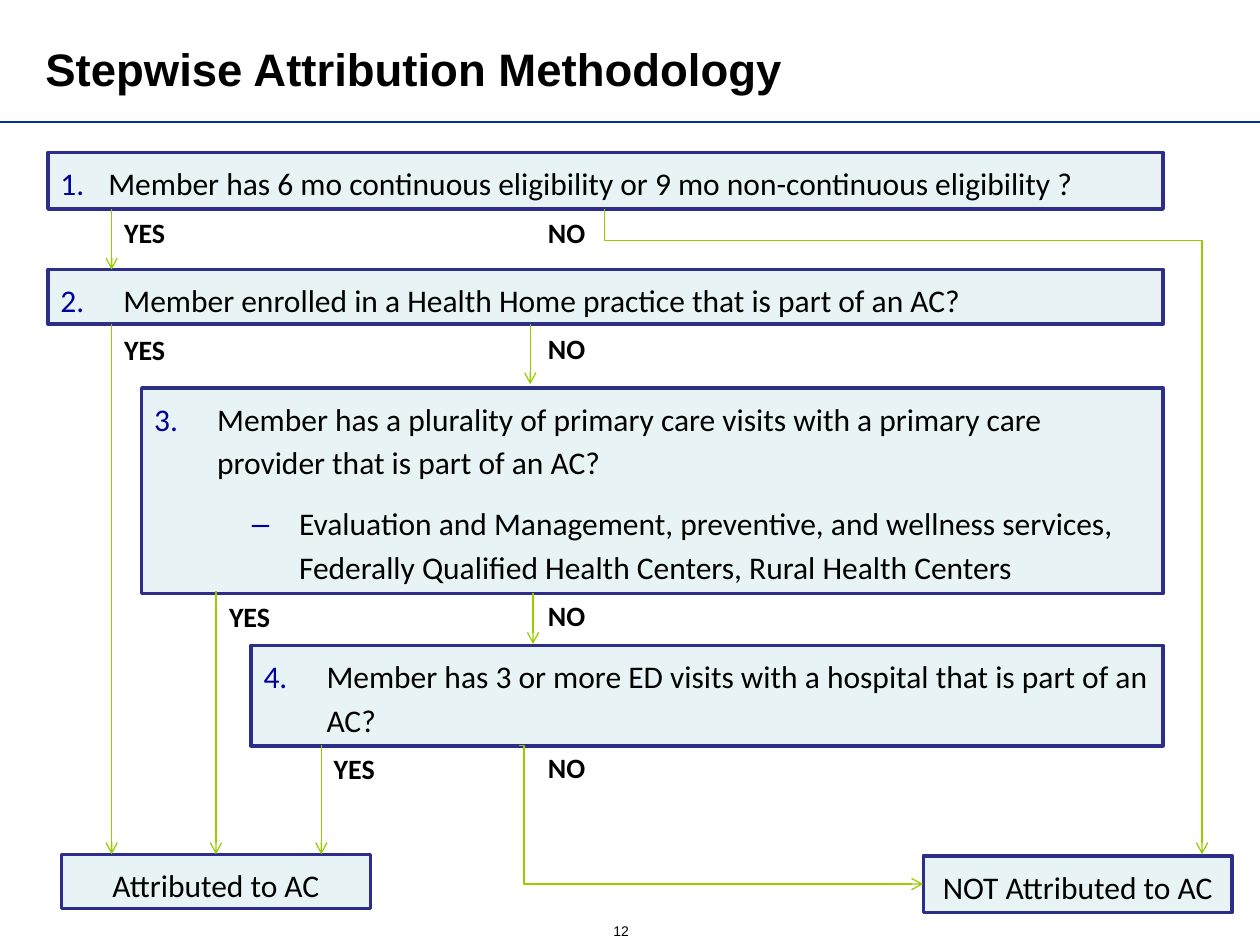
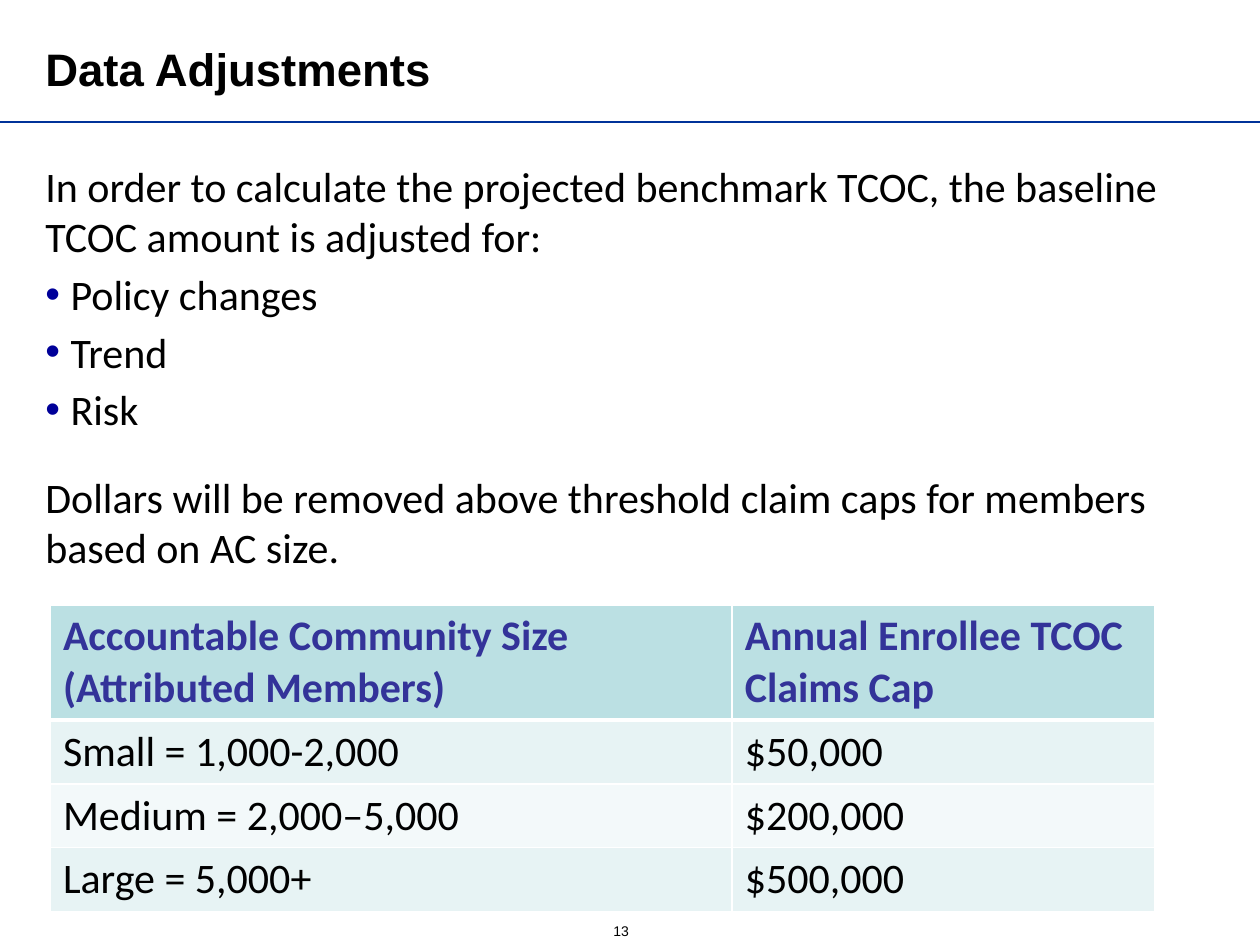
from lxml import etree
from pptx import Presentation
from pptx.dml.color import RGBColor
from pptx.enum.shapes import MSO_CONNECTOR, MSO_SHAPE
from pptx.enum.text import MSO_ANCHOR, MSO_AUTO_SIZE, PP_ALIGN
from pptx.oxml.ns import qn
from pptx.util import Pt

STRAIGHT, ELBOW = MSO_CONNECTOR.STRAIGHT, MSO_CONNECTOR.ELBOW
RECTANGLE = MSO_SHAPE.RECTANGLE
TOP, MIDDLE = MSO_ANCHOR.TOP, MSO_ANCHOR.MIDDLE
LEFT, CENTER = PP_ALIGN.LEFT, PP_ALIGN.CENTER
NO_FIT = MSO_AUTO_SIZE.NONE
TITLE_ONLY, TITLE_AND_BODY = 5, 1
TOP_SIDE, LEFT_SIDE = 0, 1

BLACK, WHITE = "000000", "FFFFFF"
RULE, BULLET, ARROW = "003399", "000099", "99CC00"
BOX_FILL, BOX_LINE = "E7F3F4", "2D2D8A"
HEAD_FILL, HEAD_TEXT, PALE = "BBE0E3", "333399", "F3F9FA"

TITLE_FONT = dict(name="Arial", size=Pt(26), bold=True)
NUMBER_FONT = dict(name="Arial", size=Pt(8))
STEP_FONT = dict(name="Calibri", size=Pt(18))
ANSWER_FONT = dict(name="Calibri", size=Pt(16), bold=True)
BODY_FONT = dict(name="Calibri", size=Pt(24), bold=False)
HEAD_FONT = dict(name="Calibri", size=Pt(24), bold=True)
STEP_SPACING = dict(line_spacing=1.15, space_after=Pt(10))

# Slide 12: places are left, top, width, height
STEPS = [
    ((27.4, 87.1, 637.2, 32.4), 27.4,
     "Member has 6 mo continuous eligibility or 9 mo non-continuous eligibility ?", None),
    ((27.4, 154.1, 637.2, 31), 36,
     "Member enrolled in a Health Home practice that is part of an AC?", None),
    ((81, 221.8, 583.6, 117.4), 36,
     "Member has a plurality of primary care visits with a primary care provider "
     "that is part of an AC?",
     "Evaluation and Management, preventive, and wellness services, "
     "Federally Qualified Health Centers, Rural Health Centers"),
    ((143.5, 368.8, 521.1, 57.4), 36,
     "Member has 3 or more ED visits with a hospital that is part of an AC?", None),
]
ATTRIBUTED = ("Attributed to AC", (35.2, 488.2, 176.4, 31))
NOT_ATTRIBUTED = ("NOT Attributed to AC", (527.6, 489, 176.4, 32.4))
# x, top and bottom of each straight arrow
ARROWS = [(63.8, 119.5, 154.1), (63.8, 185.1, 488.2), (303, 185.1, 219.6),
          (304.6, 338.6, 368), (183.6, 425.8, 488.2)]
STEP_3_YES = (123.4, 338, 488.2)
# left of YES, top of YES, top of NO
ANSWERS = [(63.8, 119.5, 119.5), (63.8, 186.5, 185.8),
           (123.8, 339.1, 338.4), (183.6, 426.2, 425.5)]
NO_LEFT = 306

# Slide 13: text, bulleted, space before
ADJUSTMENTS = [
    ("In order to calculate the projected benchmark TCOC, the baseline TCOC amount "
     "is adjusted for:", False, 0),
    ("Policy changes", True, 4.2),
    ("Trend", True, 4.2),
    ("Risk", True, 4.2),
    ("Dollars will be removed above threshold claim caps for members based on AC size.",
     False, 21),
]
CAPS = [
    ("Accountable Community Size (Attributed Members)", "Annual Enrollee TCOC Claims Cap"),
    ("Small = 1,000-2,000", "$50,000"),
    ("Medium = 2,000–5,000", "$200,000"),
    ("Large = 5,000+", "$500,000"),
]
CAP_COLUMNS = (389.6, 241.3)
CAP_ROWS = (65.8, 36.5, 36.5, 36.5)


def color(hex_text):
    return RGBColor.from_string(hex_text)


def points(place):
    return [Pt(value) for value in place]


def apply(target, values):
    for name, value in values.items():
        setattr(target, name, value)


def add_element(parent, tag, **attributes):
    element = etree.SubElement(parent, qn(tag))
    for name, value in attributes.items():
        element.set(name, str(value))
    return element


def write(para, text, font, hex_text=BLACK, **spacing):
    apply(para, spacing)
    span = para.add_run()
    span.text = text
    apply(span.font, font)
    span.font.color.rgb = color(hex_text)


def set_bullet(para, margin, hang, tag, **attributes):
    properties = para._p.get_or_add_pPr()
    properties.set("marL", str(Pt(margin)))
    properties.set("indent", str(Pt(-hang)))
    if tag != "a:buNone":
        add_element(add_element(properties, "a:buClr"), "a:srgbClr", val=BULLET)
        add_element(properties, "a:buFont", typeface="Arial")
    add_element(properties, tag, **attributes)


def place_frame(box, place, anchor, wrap=True):
    box.left, box.top, box.width, box.height = points(place)
    apply(box.text_frame, dict(word_wrap=wrap, auto_size=NO_FIT, vertical_anchor=anchor))
    return box.text_frame.paragraphs[0]


def add_text(page, place, text, font, wrap=True):
    box = page.shapes.add_textbox(*points(place))
    write(place_frame(box, place, TOP, wrap), text, font)


def add_box(page, place):
    box = page.shapes.add_shape(RECTANGLE, *points(place))
    box.shadow.inherit = False
    box.fill.solid()
    box.fill.fore_color.rgb = color(BOX_FILL)
    box.line.color.rgb = color(BOX_LINE)
    box.line.width = Pt(2)
    return box, place_frame(box, place, TOP)


def add_line(page, start, end, hex_text=ARROW, width=0.75, kind=STRAIGHT, arrow=True):
    line = page.shapes.add_connector(kind, *points(start + end))
    line.line.color.rgb = color(hex_text)
    line.line.width = Pt(width)
    properties = line._element.spPr
    if arrow:
        add_element(properties.find(qn("a:ln")), "a:tailEnd", type="arrow")
    add_element(properties, "a:effectLst")
    return line


def bend(line, share):
    """Put the turn of an elbow after this share of its way."""
    geometry = line._element.spPr.find(qn("a:prstGeom"))
    guides = geometry.find(qn("a:avLst"))
    if guides is None:
        guides = add_element(geometry, "a:avLst")
    add_element(guides, "a:gd", name="adj1", fmla=f"val {round(share * 100000)}")


def turn_down(line):
    """Make an elbow leave downwards: swap its sides about the centre and rotate."""
    width, height = line.width, line.height
    shift = (width - height) // 2
    line.left, line.top = line.left + shift, line.top - shift
    line.width, line.height = height, width
    frame = line._element.spPr.find(qn("a:xfrm"))
    frame.set("rot", "16200000")
    frame.set("flipH", "1")


def add_page(deck, layout, title, number):
    page = deck.slides.add_slide(deck.slide_layouts[layout])
    para = place_frame(page.shapes.title, (18.7, 10.1, 547.2, 58.3), MIDDLE)
    write(para, title, TITLE_FONT, alignment=LEFT)
    add_line(page, (0, 69.8), (720, 69.8), RULE, 1.5, arrow=False)
    add_text(page, (343.4, 523.4, 24.5, 16.6), str(number), NUMBER_FONT, wrap=False)
    return page


def build_attribution(deck):
    page = add_page(deck, TITLE_ONLY, "Stepwise Attribution Methodology", 12)

    # Numbered questions
    for number, (place, hang, question, detail) in enumerate(STEPS, 1):
        box, para = add_box(page, place)
        set_bullet(para, hang, hang, "a:buAutoNum", type="arabicPeriod", startAt=number)
        write(para, question, STEP_FONT, alignment=LEFT, **STEP_SPACING)
        if detail:
            para = box.text_frame.add_paragraph()
            set_bullet(para, 82.8, 27, "a:buChar", char="–")
            write(para, detail, STEP_FONT, alignment=LEFT, level=1, **STEP_SPACING)

    # Outcomes
    outcomes = []
    for text, place in (ATTRIBUTED, NOT_ATTRIBUTED):
        box, para = add_box(page, place)
        write(para, text, STEP_FONT, alignment=CENTER, **STEP_SPACING)
        outcomes.append(box)
    attributed, not_attributed = outcomes

    # Arrows
    for x, top, bottom in ARROWS:
        add_line(page, (x, top), (x, bottom))
    x, top, bottom = STEP_3_YES
    add_line(page, (x, top), (x, bottom)).end_connect(attributed, TOP_SIDE)

    last_no = add_line(page, (296.8, 426.2), (527.6, 505.2), kind=ELBOW)
    last_no.end_connect(not_attributed, LEFT_SIDE)
    bend(last_no, 0.012)
    first_no = add_line(page, (345.6, 119.5), (686.9, 488.2), kind=ELBOW)
    turn_down(first_no)
    bend(first_no, 0.049)

    # Answers
    for yes_left, yes_top, no_top in ANSWERS:
        add_text(page, (yes_left, yes_top, 39.6, 26.6), "YES", ANSWER_FONT)
        add_text(page, (NO_LEFT, no_top, 39.6, 26.6), "NO", ANSWER_FONT)


def add_cell_borders(cell, bottom):
    properties = cell._tc.get_or_add_tcPr()
    for side, width in zip("LRTB", (1, 1, 1, bottom)):
        border = add_element(properties, f"a:ln{side}", w=Pt(width))
        add_element(add_element(border, "a:solidFill"), "a:srgbClr", val=WHITE)


def build_adjustments(deck):
    page = add_page(deck, TITLE_AND_BODY, "Data Adjustments", 13)

    # Adjustment list
    body = page.placeholders[1]
    para = place_frame(body, (18.7, 88, 681.1, 254), TOP)
    for index, (text, bulleted, before) in enumerate(ADJUSTMENTS):
        if index:
            para = body.text_frame.add_paragraph()
        if bulleted:
            set_bullet(para, 14.4, 14.4, "a:buChar", char="•")
        else:
            set_bullet(para, 0, 0, "a:buNone")
        write(para, text, BODY_FONT, space_before=Pt(before))

    # Claim caps
    place = (28.8, 345.6, sum(CAP_COLUMNS), sum(CAP_ROWS))
    table = page.shapes.add_table(len(CAPS), len(CAP_COLUMNS), *points(place)).table
    for column, width in zip(table.columns, CAP_COLUMNS):
        column.width = Pt(width)
    for row_index, (row, height) in enumerate(zip(table.rows, CAP_ROWS)):
        row.height = Pt(height)
        head = row_index == 0
        fill = HEAD_FILL if head else (PALE, BOX_FILL)[row_index % 2]
        for cell, text in zip(row.cells, CAPS[row_index]):
            add_cell_borders(cell, 3 if head else 1)
            cell.fill.solid()
            cell.fill.fore_color.rgb = color(fill)
            write(cell.text_frame.paragraphs[0], text,
                  HEAD_FONT if head else BODY_FONT, HEAD_TEXT if head else BLACK)


def main():
    deck = Presentation()
    deck.slide_width, deck.slide_height = Pt(720), Pt(540)
    build_attribution(deck)
    build_adjustments(deck)
    deck.save("out.pptx")


if __name__ == "__main__":
    main()
